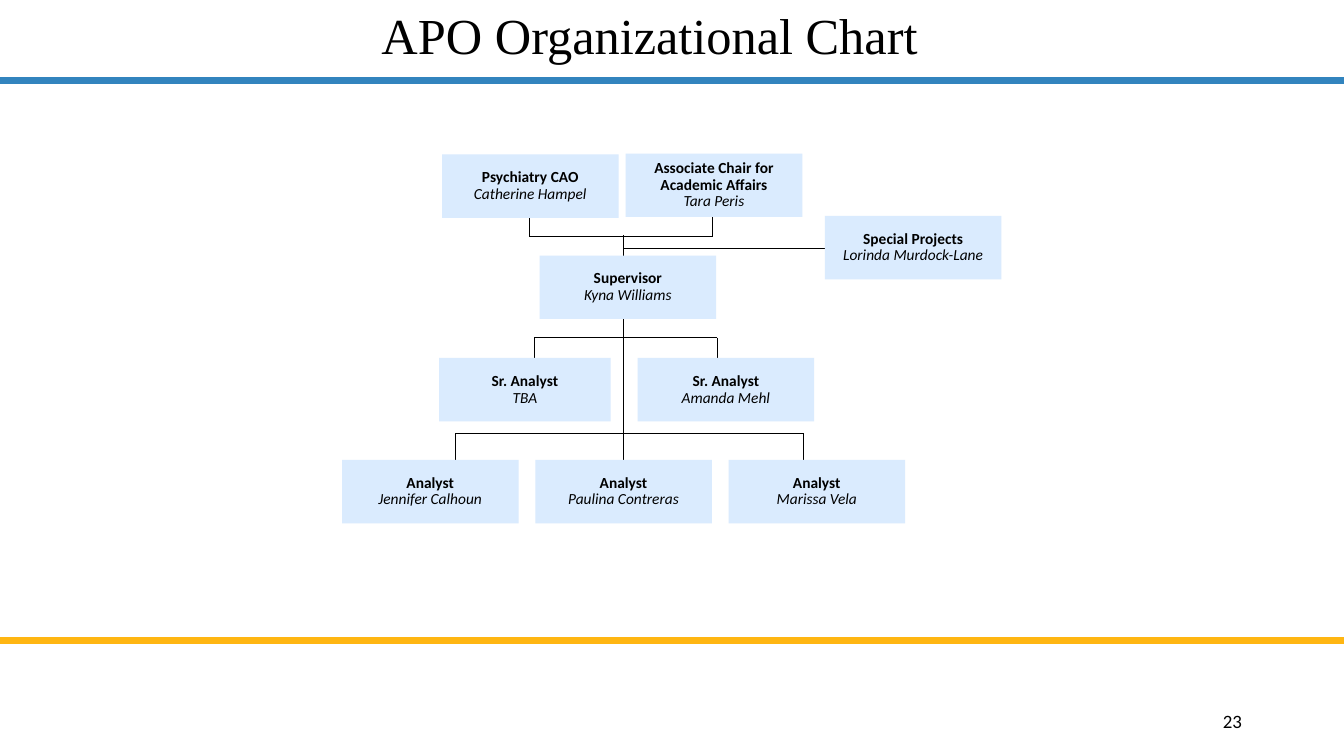
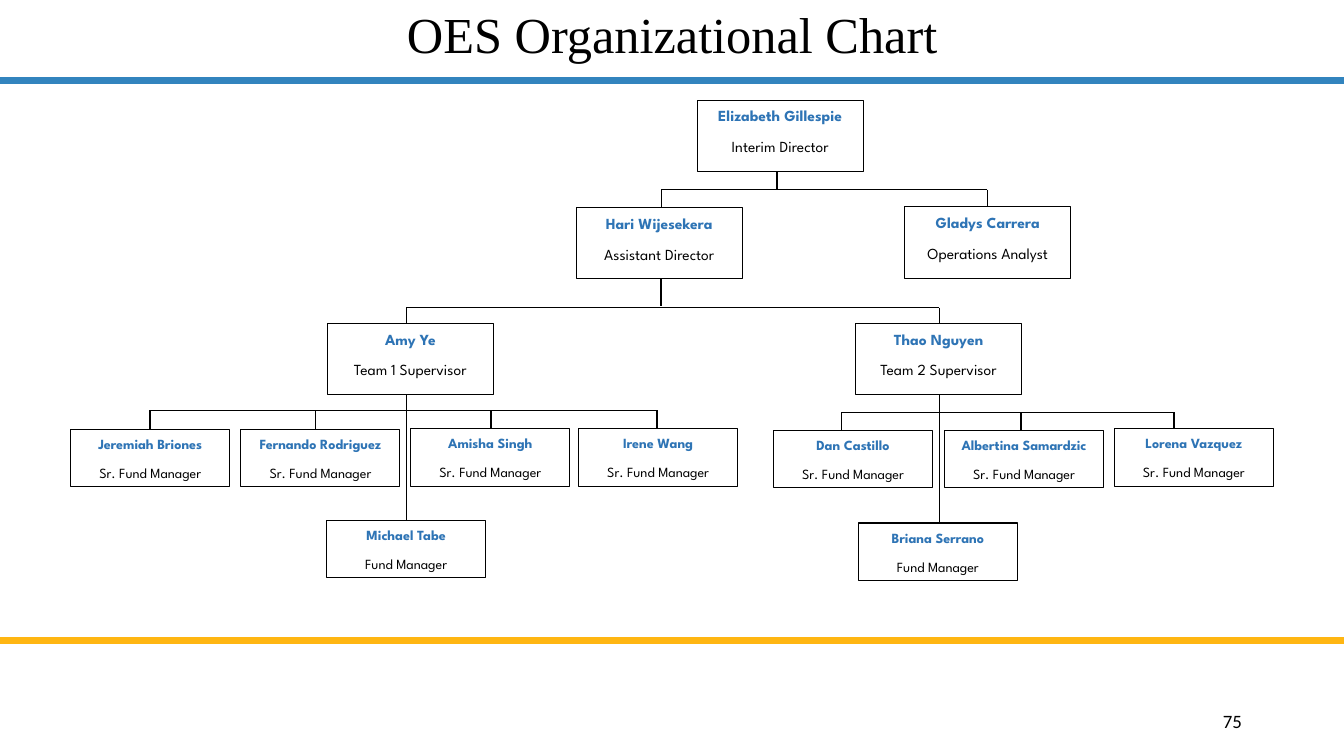
from dataclasses import dataclass
from typing import Any, Optional

from lxml import etree
from pptx import Presentation
from pptx.dml.color import RGBColor
from pptx.enum import shapes, text
from pptx.oxml.ns import qn
from pptx.util import Cm, Pt

BLACK = RGBColor(0x00, 0x00, 0x00)
WHITE = RGBColor(0xFF, 0xFF, 0xFF)
BAND_BLUE = RGBColor(0x32, 0x84, 0xBE)
BAND_GOLD = RGBColor(0xFF, 0xB6, 0x12)
CARD_BLUE = RGBColor(0xDA, 0xEB, 0xFE)
NAME_BLUE = RGBColor(0x2E, 0x74, 0xB5)

SLIDE_W, SLIDE_H = 33.87, 19.05
BANDS = ((2.03, BAND_BLUE), (16.15, BAND_GOLD))
TITLE_FONT = dict(name="Times New Roman", size=Pt(36), color=BLACK)
NUMBER_FONT = dict(name="Calibri", size=Pt(13.5), color=BLACK)


@dataclass(frozen=True)
class CardStyle:
    width: float
    height: float
    fill: RGBColor
    outline: Optional[RGBColor]
    frame: dict[str, Any]
    paragraph: dict[str, Any]
    head: dict[str, Any]
    sub: dict[str, Any]


@dataclass(frozen=True)
class Card:
    x: float
    y: float
    head: str
    sub: str
    style: CardStyle


@dataclass(frozen=True)
class Branch:
    """A crossbar at height y, with a leg from it to end at each x."""
    y: float
    xs: tuple[float, ...]
    end: float


@dataclass(frozen=True)
class Line:
    x1: float
    y1: float
    x2: float
    y2: float


@dataclass(frozen=True)
class Chart:
    title: str
    title_x: float
    title_y: float
    title_w: float
    number: str
    line_pt: float
    branches: tuple[Branch, ...]
    lines: tuple[Line, ...]
    cards: tuple[Card, ...]


def apo_style(width: float = 4.45) -> CardStyle:
    margins = {f"margin_{side}": Cm(0.03) for side in ("left", "top", "right", "bottom")}
    font = dict(name="Calibri", size=Pt(11), color=BLACK)
    return CardStyle(
        width, 1.6, CARD_BLUE, None,
        dict(margins, vertical_anchor=text.MSO_ANCHOR.MIDDLE),
        dict(line_spacing=0.9),
        dict(font, bold=True), dict(font, italic=True))


def oes_style(width: float, height: float, size: float) -> CardStyle:
    font = dict(name="League Spartan", size=Pt(size))
    return CardStyle(
        width, height, WHITE, BLACK,
        dict(vertical_anchor=text.MSO_ANCHOR.TOP),
        dict(line_spacing=1.07, space_after=Pt(8)),
        dict(font, bold=True, color=NAME_BLUE), dict(font, color=BLACK))


APO = apo_style()
LEAD = oes_style(4.19, 1.8, 11)
MANAGER = oes_style(4.01, 1.45, 10)

CHARTS = (
    Chart(
        "APO Organizational Chart", 4.17, -0.33, 24.41, "23", 0.5,
        branches=(
            Branch(5.95, (13.34, 17.96), 4.83),
            Branch(8.51, (13.46, 18.08), 9.6),
            Branch(10.92, (11.48, 20.24), 12.2),
        ),
        lines=(
            Line(15.72, 5.92, 15.72, 7.0),
            Line(15.72, 7.5, 15.72, 11.6),
            Line(15.72, 6.25, 20.85, 6.25),
        ),
        cards=(
            Card(11.14, 3.89, "Psychiatry CAO", "Catherine Hampel", APO),
            Card(15.77, 3.87, "Associate Chair for Academic Affairs", "Tara Peris", APO),
            Card(20.79, 5.44, "Special Projects", "Lorinda Murdock-Lane", APO),
            Card(13.6, 6.44, "Supervisor", "Kyna Williams", APO),
            Card(11.07, 9.02, "Sr. Analyst", "TBA", apo_style(4.32)),
            Card(16.07, 9.02, "Sr. Analyst", "Amanda Mehl", APO),
            *(Card(8.62 + 4.87 * i, 11.59, "Analyst", name, APO) for i, name in
              enumerate(("Jennifer Calhoun", "Paulina Contreras", "Marissa Vela"))),
        ),
    ),
    Chart(
        "OES Organizational Chart", 2.34, -0.36, 29.21, "75", 1,
        branches=(
            Branch(4.78, (16.67, 24.88), 5.5),
            Branch(7.75, (10.24, 23.67), 13.3),
            Branch(10.34, (3.78, 7.95, 12.37, 16.56), 11),
            Branch(10.39, (21.21, 25.73, 29.59), 11),
        ),
        lines=(
            Line(19.58, 4.06, 19.58, 4.78),
            Line(16.66, 7.0, 16.66, 7.72),
        ),
        cards=(
            Card(17.57, 2.53, "Elizabeth Gillespie", "Interim Director", LEAD),
            Card(14.52, 5.23, "Hari Wijesekera", "Assistant Director", LEAD),
            Card(22.8, 5.21, "Gladys Carrera", "Operations Analyst", LEAD),
            Card(8.25, 8.15, "Amy Ye", "Team 1 Supervisor", LEAD),
            Card(21.56, 8.15, "Thao Nguyen", "Team 2 Supervisor", LEAD),
            *(Card(x, y, name, "Sr. Fund Manager", MANAGER) for x, y, name in (
                (1.78, 10.82, "Jeremiah Briones"),
                (6.07, 10.82, "Fernando Rodriguez"),
                (10.35, 10.8, "Amisha Singh"),
                (14.58, 10.8, "Irene Wang"),
                (19.49, 10.84, "Dan Castillo"),
                (23.8, 10.84, "Albertina Samardzic"),
                (28.08, 10.8, "Lorena Vazquez"))),
            Card(8.23, 13.11, "Michael Tabe", "Fund Manager", MANAGER),
            Card(21.63, 13.18, "Briana Serrano", "Fund Manager", MANAGER),
        ),
    ),
)


def set_attributes(target: Any, values: dict[str, Any]) -> None:
    for key, value in values.items():
        setattr(target, key, value)


def write(p: Any, words: str, font: dict[str, Any]) -> None:
    r = p.add_run()
    r.text = words
    set_attributes(r.font, {k: v for k, v in font.items() if k != "color"})
    r.font.color.rgb = font["color"]


def add_line(s: Any, line: Line, color: RGBColor, width: float) -> None:
    ends = (Cm(v) for v in (line.x1, line.y1, line.x2, line.y2))
    connector = s.shapes.add_connector(shapes.MSO_CONNECTOR.STRAIGHT, *ends)
    connector.line.color.rgb = color
    connector.line.width = Pt(width)
    etree.SubElement(connector._element.spPr, qn("a:effectLst"))


def add_branch(s: Any, branch: Branch, width: float) -> None:
    add_line(s, Line(min(branch.xs), branch.y, max(branch.xs), branch.y), BLACK, width)
    for x in branch.xs:
        add_line(s, Line(x, branch.y, x, branch.end), BLACK, width)


def add_card(s: Any, card: Card) -> None:
    style = card.style
    sp = s.shapes.add_shape(
        shapes.MSO_SHAPE.RECTANGLE,
        Cm(card.x), Cm(card.y), Cm(style.width), Cm(style.height))
    sp.shadow.inherit = False
    sp.fill.solid()
    sp.fill.fore_color.rgb = style.fill
    if style.outline is None:
        sp.line.fill.background()
    else:
        sp.line.color.rgb = style.outline
        sp.line.width = Pt(0.75)
    tf = sp.text_frame
    set_attributes(tf, dict(style.frame, word_wrap=True))
    for p, words, font in ((tf.paragraphs[0], card.head, style.head),
                           (tf.add_paragraph(), card.sub, style.sub)):
        set_attributes(p, dict(style.paragraph, alignment=text.PP_ALIGN.CENTER))
        write(p, words, font)


def add_label(s: Any, words: str, box: tuple[float, float, float, float],
              font: dict[str, Any], paragraph: dict[str, Any]) -> None:
    tf = s.shapes.add_textbox(*(Cm(v) for v in box)).text_frame
    set_attributes(tf, dict(word_wrap=True, vertical_anchor=text.MSO_ANCHOR.MIDDLE))
    p = tf.paragraphs[0]
    set_attributes(p, paragraph)
    write(p, words, font)


def add_chart_slide(prs: Any, chart: Chart) -> None:
    s = prs.slides.add_slide(prs.slide_layouts[6])
    for y, color in BANDS:
        add_line(s, Line(0, y, SLIDE_W, y), color, 5)
    add_label(s, chart.title, (chart.title_x, chart.title_y, chart.title_w, 2.6),
              TITLE_FONT, dict(alignment=text.PP_ALIGN.CENTER, line_spacing=0.9))
    for branch in chart.branches:
        add_branch(s, branch, chart.line_pt)
    for line in chart.lines:
        add_line(s, line, BLACK, chart.line_pt)
    for card in chart.cards:
        add_card(s, card)
    add_label(s, chart.number, (23.93, 17.65, 7.62, 1.02),
              NUMBER_FONT, dict(alignment=text.PP_ALIGN.RIGHT))


def main() -> None:
    prs = Presentation()
    prs.slide_width, prs.slide_height = Cm(SLIDE_W), Cm(SLIDE_H)
    for chart in CHARTS:
        add_chart_slide(prs, chart)
    prs.save("out.pptx")


if __name__ == "__main__":
    main()
